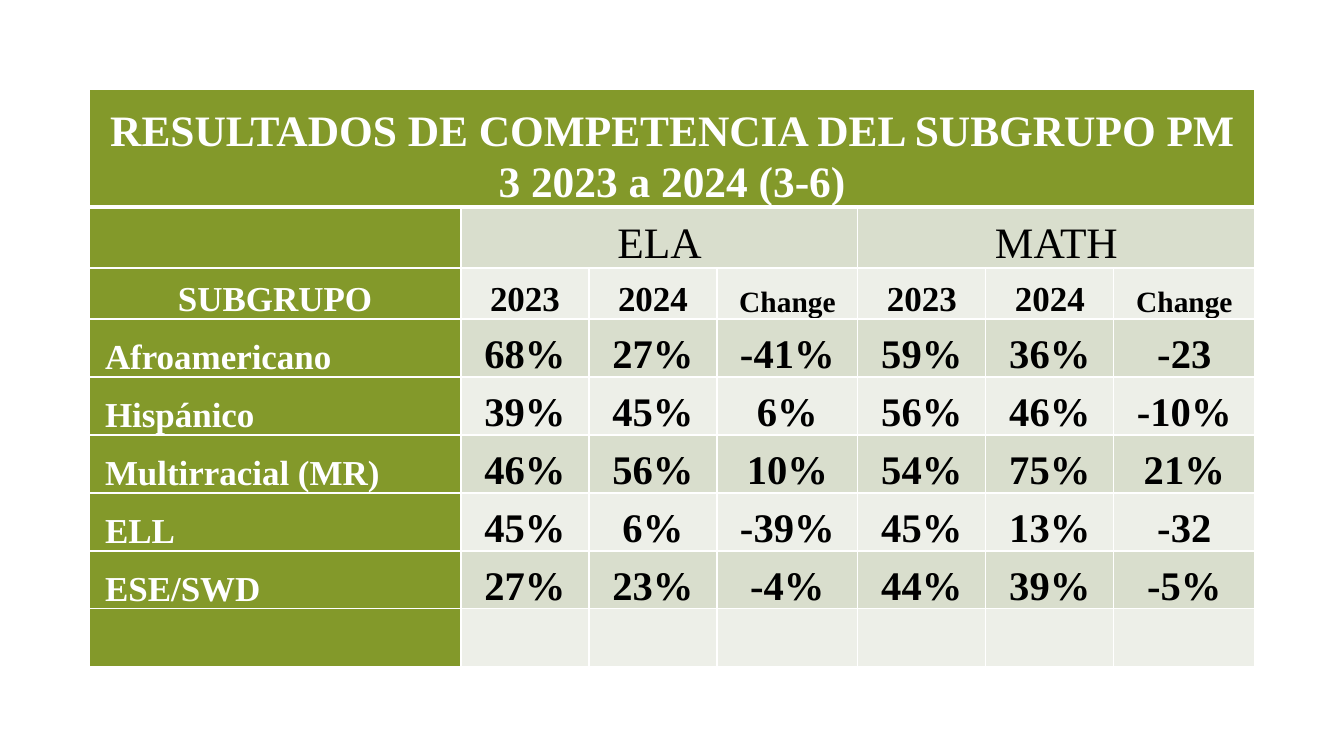
from lxml import etree
from pptx import Presentation, util as u
from pptx.dml.color import RGBColor
from pptx.enum import text
from pptx.oxml import ns

PX = 914400 / 100.8
GREEN, DARK_BAND, LIGHT_BAND = "83992A", "D9DECD", "EDEFE8"
WHITE, BLACK = "FFFFFF", "000000"


def px(length):
    return u.Emu(round(length * PX))


def colour(code):
    return RGBColor.from_string(code)


deck = Presentation()
deck.slide_width, deck.slide_height = px(1344), px(756)
page = deck.slides.add_slide(deck.slide_layouts[6])

years = ["2023", "2024", "Change"]
rows = [
    ["RESULTADOS DE COMPETENCIA DEL SUBGRUPO PM 3 2023 a 2024 (3-6)"] + [""] * 6,
    ["", "ELA", "", "", "MATH", "", ""],
    ["SUBGRUPO"] + years * 2,
    ["Afroamericano", "68%", "27%", "-41%", "59%", "36%", "-23"],
    ["Hispánico", "39%", "45%", "6%", "56%", "46%", "-10%"],
    ["Multirracial (MR)", "46%", "56%", "10%", "54%", "75%", "21%"],
    ["ELL", "45%", "6%", "-39%", "45%", "13%", "-32"],
    ["ESE/SWD", "27%", "23%", "-4%", "44%", "39%", "-5%"],
    [""] * 7,
]
widths = [372] + [128, 128, 141] * 2
heights = [118, 61, 51] + [58] * 6

frame = page.shapes.add_table(len(rows), len(widths), px(89), px(89), px(sum(widths)), px(sum(heights)))
table = frame.table
table.first_row = table.horz_banding = False
for column, width in zip(table.columns, widths):
    column.width = px(width)
for row, height in zip(table.rows, heights):
    row.height = px(height)

for r, words in enumerate(rows):
    for c, word in enumerate(words):
        cell = table.cell(r, c)
        heading = r == 0 or c == 0

        for side in ("lnL", "lnR", "lnT", "lnB"):
            thick = (r, side) in ((0, "lnB"), (1, "lnT"))
            line = etree.SubElement(cell._tc.get_or_add_tcPr(), ns.qn("a:" + side), w=str(u.Pt(3 if thick else 1)))
            paint = etree.SubElement(line, ns.qn("a:solidFill"))
            etree.SubElement(paint, ns.qn("a:srgbClr"), val=WHITE)
        cell.fill.solid()
        cell.fill.fore_color.rgb = colour(GREEN if heading else DARK_BAND if r % 2 else LIGHT_BAND)

        if not word:
            continue
        layout = {"margin_left": px(16), "margin_right": px(16), "margin_top": 0, "margin_bottom": 0,
                  "vertical_anchor": text.MSO_ANCHOR.BOTTOM}
        for name, value in layout.items():
            setattr(cell, name, value)

        para = cell.text_frame.paragraphs[0]
        para.line_spacing = 1.07
        para.alignment = text.PP_ALIGN.LEFT if c == 0 and r > 2 else text.PP_ALIGN.CENTER
        span = para.add_run()
        span.text = word
        if r < 2:
            size = 31
        elif word == "Change":
            size = 21
        else:
            size = 25 if r == 2 or c == 0 else 29
        style = {"name": "Times New Roman", "size": u.Pt(size), "bold": r != 1}
        for name, value in style.items():
            setattr(span.font, name, value)
        span.font.color.rgb = colour(WHITE if heading else BLACK)

for r, first, last in ((0, 0, 6), (1, 1, 3), (1, 4, 6)):
    table.cell(r, first).merge(table.cell(r, last))

deck.save("out.pptx")
